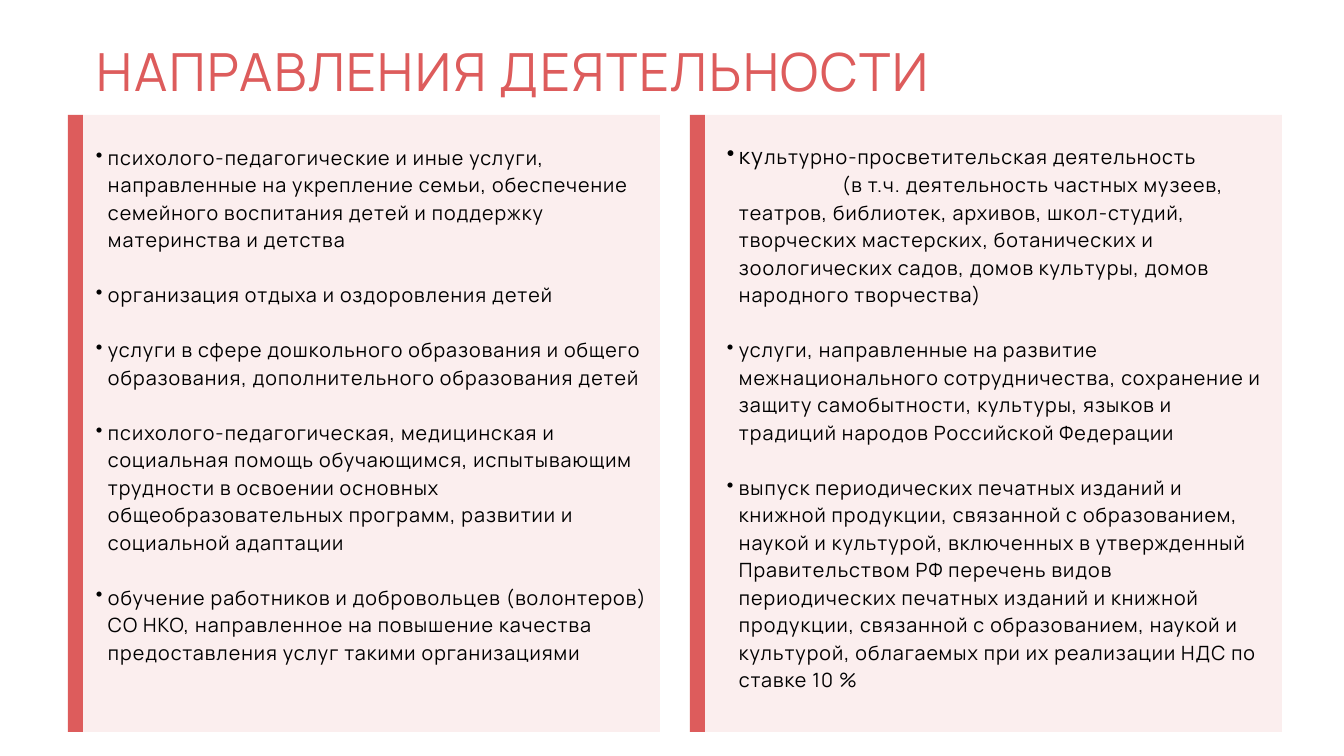
import pptx
import pptx.util
import pptx.dml.color
import pptx.enum.shapes
import pptx.enum.text
import pptx.oxml.ns
import lxml.etree

EMU_PER_PX = 914400 / 122
RED = "DD5C5C"
FONT = "Manrope"
BULLET_INDENT, BULLET_HANG = 25, 12


def px(value):
    return pptx.util.Emu(round(value * EMU_PER_PX))


def format_run(run, size, color, spacing):
    run.font.name = FONT
    run.font.size = pptx.util.Pt(size)
    run.font.color.rgb = pptx.dml.color.RGBColor.from_string(color)
    run._r.get_or_add_rPr().set("spc", str(spacing))


presentation = pptx.Presentation()
presentation.slide_width = px(1344)
presentation.slide_height = px(756)
slide = presentation.slides.add_slide(presentation.slide_layouts[6])

# Title
title = slide.shapes.add_textbox(px(40), px(24), px(946), px(72))
frame = title.text_frame
frame.margin_left = frame.margin_right = frame.margin_top = frame.margin_bottom = 0
frame.word_wrap = True
frame.text = "НАПРАВЛЕНИЯ ДЕЯТЕЛЬНОСТИ"
paragraph = frame.paragraphs[0]
paragraph.alignment = pptx.enum.text.PP_ALIGN.CENTER
paragraph.line_spacing = pptx.util.Pt(46.3)
format_run(paragraph.runs[0], 31, RED, 100)

# Each item is (first-line indent, runs); a bulleted item hangs to the left
left_items = [
    (-BULLET_HANG, ["психолого-педагогические и иные услуги, направленные на укрепление семьи, "
                    "обеспечение семейного воспитания детей и поддержку материнства и детства"]),
    (-BULLET_HANG, ["организация отдыха и оздоровления детей"]),
    (-BULLET_HANG, ["услуги в сфере дошкольного образования и общего образования, "
                    "дополнительного образования детей"]),
    (-BULLET_HANG, ["психолого-педагогическая, медицинская и социальная помощь обучающимся, "
                    "испытывающим трудности в освоении основных общеобразовательных программ, "
                    "развитии и социальной адаптации"]),
    (-BULLET_HANG, ["обучение работников и добровольцев (волонтеров) СО НКО, направленное на "
                    "повышение качества предоставления услуг такими организациями"]),
]
right_items = [
    (-BULLET_HANG, ["ку", "льтурно-просветительская деятельность"]),
    (103, ["(в т.ч. деятельность частных музеев, театров, библиотек, архивов, школ-студий, "
           "творческих мастерских, ботанических и зоологических садов, домов культуры, "
           "домов народного творчества)"]),
    (-BULLET_HANG, ["услуги, направленные на развитие межнационального сотрудничества, сохранение и "
                    "защиту самобытности, культуры, языков и традиций народов Российской Федерации"]),
    (-BULLET_HANG, ["выпуск периодических печатных изданий и книжной продукции, связанной с "
                    "образованием, наукой и культурой, включенных в утвержденный Правительством РФ "
                    "перечень видов периодических печатных изданий и книжной продукции, связанной с "
                    "образованием, наукой и культурой, облагаемых при их реализации НДС по ставке 10 %"]),
]

# Two columns: tinted panel, accent bar, list
for bar_left, text_left, text_width, items in [
    (68, 83, 577, left_items),
    (690, 714, 560, right_items),
]:
    for left, width, opacity in [(bar_left + 15, 577, 10), (bar_left, 15, 100)]:
        shape = slide.shapes.add_shape(
            pptx.enum.shapes.MSO_SHAPE.RECTANGLE, px(left), px(115), px(width), px(617))
        shape.shadow.inherit = False
        shape.line.fill.background()
        shape.fill.solid()
        shape.fill.fore_color.rgb = pptx.dml.color.RGBColor.from_string(RED)
        if opacity < 100:
            color = shape._element.spPr.find(".//" + pptx.oxml.ns.qn("a:srgbClr"))
            alpha = lxml.etree.SubElement(color, pptx.oxml.ns.qn("a:alpha"))
            alpha.set("val", str(opacity * 1000))

    text_box = slide.shapes.add_textbox(px(text_left), px(142), px(text_width), px(550))
    frame = text_box.text_frame
    frame.margin_left = frame.margin_right = frame.margin_top = frame.margin_bottom = 0
    frame.word_wrap = True
    for index, (indent, texts) in enumerate(items):
        paragraph = frame.paragraphs[0] if index == 0 else frame.add_paragraph()
        paragraph.line_spacing = pptx.util.Pt(16.2)
        properties = paragraph._p.get_or_add_pPr()
        properties.set("marL", str(px(BULLET_INDENT)))
        properties.set("indent", str(px(indent)))
        if indent < 0:
            if index > 0:
                paragraph.space_before = pptx.util.Pt(16.2)
            bullet = lxml.etree.SubElement(properties, pptx.oxml.ns.qn("a:buChar"))
            bullet.set("char", "•")
        for text in texts:
            run = paragraph.add_run()
            run.text = text
            enlarged = text == "ку"
            format_run(run, 13.2 if enlarged else 11.6, "000000", 70 if enlarged else 60)

presentation.save("out.pptx")
